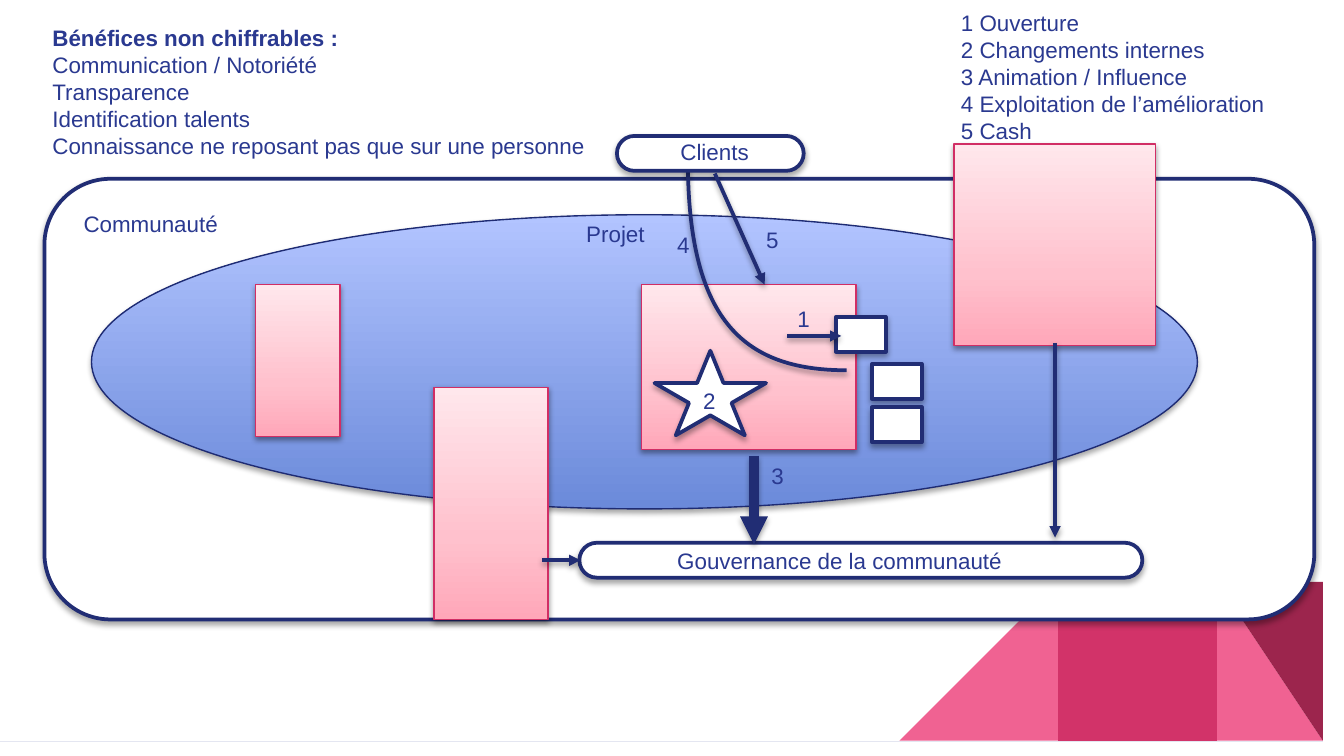
from dataclasses import dataclass, field
from typing import NamedTuple, Optional

from lxml.etree import SubElement
from pptx import Presentation
from pptx.dml.color import RGBColor
from pptx.enum.shapes import MSO_CONNECTOR as Link, MSO_SHAPE as Preset
from pptx.enum.text import MSO_ANCHOR as Anchor, MSO_AUTO_SIZE as AutoSize
from pptx.oxml.ns import qn
from pptx.util import Cm, Pt


class Shadow(NamedTuple):
    opacity: int
    distance: float
    blur: float = 3


class Gradient(NamedTuple):
    stops: tuple[tuple[int, str], ...]
    edge: str
    shadow: Shadow


@dataclass(frozen=True)
class Theme:
    font: str = "Arial"
    size: float = 12
    text: str = "2A3990"
    stroke: str = "212D74"
    paper: str = "FFFFFF"
    pink: str = "F06292"
    crimson: str = "D23369"
    burgundy: str = "9C254D"
    stroke_width: float = 2
    thin_width: float = 0.75
    soft: Shadow = Shadow(35, 1.8)
    firm: Shadow = Shadow(38, 1.6)
    blue_fade: Gradient = Gradient(
        ((0, "6B8ADA"), (100, "B2C4FF")), "1E2B73", Shadow(35, 1.8))
    pink_fade: Gradient = Gradient(
        ((0, "FFA7B9"), (35, "FFC1CD"), (100, "FFE7EC")), "D12E65", Shadow(38, 1.6))


THEME = Theme()
CM = Cm(1)


class Panel(NamedTuple):
    left: float
    top: float
    width: float
    height: float
    preset: Preset = Preset.RECTANGLE
    fade: Optional[Gradient] = None
    adjustments: tuple[float, ...] = ()


class Arrow(NamedTuple):
    start: tuple[float, float]
    end: tuple[float, float]
    weight: float = THEME.stroke_width


class Label(NamedTuple):
    text: str
    left: float
    top: float
    width: float = 0.53


@dataclass(frozen=True)
class Listing:
    left: float
    top: float
    width: float
    height: float
    items: list[str]
    bold_items: set[int] = field(default_factory=set)


SLOT = (0.94, 0.66)
PILL_HEIGHT = 0.66
COMMUNITY = Panel(0.84, 3.38, 24, 8.33, Preset.ROUNDED_RECTANGLE, adjustments=(0.15,))
PROJECT = Panel(1.73, 4.06, 20.9, 5.56, Preset.OVAL, THEME.blue_fade)
BLOCKS = [Panel(*box, fade=THEME.pink_fade) for box in (
    (4.83, 5.38, 1.6, 2.87), (8.2, 7.32, 2.16, 4.39),
    (12.12, 5.38, 4.06, 3.12), (18.03, 2.72, 3.81, 3.81))]
SLOTS = [Panel(*corner, *SLOT) for corner in ((15.8, 5.99), (16.48, 6.88), (16.48, 7.7))]
GOVERNANCE = Panel(10.95, 10.26, 10.64, PILL_HEIGHT, Preset.ROUNDED_RECTANGLE, adjustments=(0.5,))
CLIENTS = Panel(11.66, 2.57, 3.53, PILL_HEIGHT, Preset.ROUNDED_RECTANGLE, adjustments=(0.5,))
CHANGE_STAR = Panel(12.37, 6.63, 2.11, 1.6, Preset.STAR_5_POINT)
IMPROVEMENT_CURVE = [(16.46, 7.19), (14.1, 6.91), (13.06, 5.51), (13.36, 3)]
ARROWS = [
    Arrow((14.88, 6.35), (15.9, 6.35)),
    Arrow((14.25, 8.61), (14.25, 10.29), 5),
    Arrow((19.94, 6.48), (19.94, 10.16)),
    Arrow((10.24, 10.59), (10.97, 10.59)),
    Arrow((13.51, 3.28), (14.45, 5.38)),
]
LABELS = [
    Label("Projet", 10.95, 4.04, 1.4),
    Label("Communauté", 1.45, 3.84, 2.82),
    Label("Gouvernance de la communauté", 12.67, 10.21, 6.43),
    Label("Clients", 12.73, 2.49, 1.57),
    Label("1", 14.94, 5.64),
    Label("2", 13.16, 7.19),
    Label("3", 14.45, 8.61),
    Label("4", 12.67, 4.24),
    Label("5", 14.35, 4.14),
]
BENEFITS = Listing(0.86, 0.33, 10.49, 3.71, [
    "Bénéfices non chiffrables :", "Communication / Notoriété", "Transparence",
    "Identification talents", "Connaissance ne reposant pas que sur une personne"], {0})
LEGEND = Listing(18.03, 0.05, 6.15, 2.72, [
    "1 Ouverture", "2 Changements internes", "3 Animation / Influence",
    "4 Exploitation de l’amélioration", "5 Cash"])


def rgb(code: str) -> RGBColor:
    return RGBColor.from_string(code)


def set_stroke(shape, color: str, weight: float) -> None:
    shape.line.color.rgb = rgb(color)
    shape.line.width = Pt(weight)


def cast_shadow(shape, shadow: Shadow) -> None:
    effects = SubElement(shape._element.spPr, qn("a:effectLst"))
    outer = SubElement(effects, qn("a:outerShdw"), blurRad=str(Pt(shadow.blur)),
                       dist=str(Pt(shadow.distance)), dir="5400000", rotWithShape="0")
    black = SubElement(outer, qn("a:srgbClr"), val="000000")
    SubElement(black, qn("a:alpha"), val=str(shadow.opacity * 1000))


def fill_gradient(shape, fade: Gradient) -> None:
    shape.fill.gradient()
    shape.fill.gradient_angle = 90
    stops = shape._element.spPr.find(qn("a:gradFill")).find(qn("a:gsLst"))
    stops.clear()
    for position, color in fade.stops:
        stop = SubElement(stops, qn("a:gs"), pos=str(position * 1000))
        SubElement(stop, qn("a:srgbClr"), val=color)


def draw_panel(shapes, panel: Panel) -> None:
    shape = shapes.add_shape(panel.preset, Cm(panel.left), Cm(panel.top),
                             Cm(panel.width), Cm(panel.height))
    for index, value in enumerate(panel.adjustments):
        shape.adjustments[index] = value
    if panel.fade:
        fill_gradient(shape, panel.fade)
        set_stroke(shape, panel.fade.edge, THEME.thin_width)
    else:
        shape.fill.solid()
        shape.fill.fore_color.rgb = rgb(THEME.paper)
        set_stroke(shape, THEME.stroke, THEME.stroke_width)
    cast_shadow(shape, panel.fade.shadow if panel.fade else THEME.soft)


def draw_arrow(shapes, arrow: Arrow) -> None:
    connector = shapes.add_connector(Link.STRAIGHT, *map(Cm, arrow.start + arrow.end))
    set_stroke(connector, THEME.stroke, arrow.weight)
    SubElement(connector.line._get_or_add_ln(), qn("a:tailEnd"), type="triangle")
    cast_shadow(connector, THEME.firm)


def draw_curve(shapes, points: list[tuple[float, float]]) -> None:
    builder = shapes.build_freeform(*points[0], scale=CM)
    builder.add_line_segments(points[1:], close=False)
    curve = builder.convert_to_shape()
    segments = list(curve._element.iter(qn("a:lnTo")))
    outline = segments[0].getparent()
    bezier = SubElement(outline, qn("a:cubicBezTo"))
    for segment in segments:
        bezier.append(segment[0])
        outline.remove(segment)
    curve.fill.background()
    set_stroke(curve, THEME.stroke, THEME.stroke_width)
    cast_shadow(curve, THEME.firm)


def draw_polygon(shapes, points: list[tuple[float, float]], color: str) -> None:
    builder = shapes.build_freeform(*points[0], scale=CM)
    builder.add_line_segments(points[1:], close=True)
    polygon = builder.convert_to_shape()
    polygon.shadow.inherit = False
    polygon.fill.solid()
    polygon.fill.fore_color.rgb = rgb(color)
    polygon.line.fill.background()


def draw_footer(shapes, width: float, height: float) -> None:
    side, base = 2.74, 13.59
    top = base - side
    x1, x2, x3, x4 = (width - side * step for step in (3, 2, 1, 0))
    draw_polygon(shapes, [(x3, base), (x4, base), (x3, top)], THEME.pink)
    draw_polygon(shapes, [(x2, base), (x1, base), (x2, top)], THEME.pink)
    draw_polygon(shapes, [(x2, top), (x3, top), (x3, base), (x2, base)], THEME.crimson)
    draw_polygon(shapes, [(x3, top), (x4, top), (x4, base)], THEME.burgundy)
    draw_polygon(shapes, [(0, base), (width, base), (width, height), (0, height)], THEME.text)


def prepare_frame(frame) -> None:
    frame.word_wrap = False
    frame.auto_size = AutoSize.NONE
    frame.vertical_anchor = Anchor.TOP
    frame.margin_left = frame.margin_right = frame.margin_top = frame.margin_bottom = Cm(0.13)


def add_run(paragraph, text: str, bold: bool = False) -> None:
    run = paragraph.add_run()
    run.text = text
    run.font.name = THEME.font
    run.font.size = Pt(THEME.size)
    run.font.bold = bold
    run.font.color.rgb = rgb(THEME.text)


def draw_label(shapes, label: Label) -> None:
    caption = shapes.add_textbox(Cm(label.left), Cm(label.top), Cm(label.width), Cm(0.74))
    prepare_frame(caption.text_frame)
    add_run(caption.text_frame.paragraphs[0], label.text)


def fill_listing(body, listing: Listing) -> None:
    body.left, body.top = Cm(listing.left), Cm(listing.top)
    body.width, body.height = Cm(listing.width), Cm(listing.height)
    frame = body.text_frame
    prepare_frame(frame)
    for index, item in enumerate(listing.items):
        paragraph = frame.add_paragraph() if index else frame.paragraphs[0]
        paragraph.space_before = Pt(0)
        properties = paragraph._p.get_or_add_pPr()
        properties.set("marL", "0")
        properties.set("indent", "0")
        SubElement(properties, qn("a:buNone"))
        add_run(paragraph, item, index in listing.bold_items)


def main() -> None:
    width, height = 25.4, 14.29
    deck = Presentation()
    deck.slide_width, deck.slide_height = Cm(width), Cm(height)
    slide = deck.slides.add_slide(deck.slide_layouts[3])
    shapes = slide.shapes
    title, benefits, legend = list(slide.placeholders)[:3]
    title._element.getparent().remove(title._element)
    fill_listing(benefits, BENEFITS)
    fill_listing(legend, LEGEND)
    draw_footer(shapes, width, height)
    for panel in (COMMUNITY, PROJECT, *BLOCKS, *SLOTS, GOVERNANCE, CHANGE_STAR):
        draw_panel(shapes, panel)
    draw_curve(shapes, IMPROVEMENT_CURVE)
    draw_panel(shapes, CLIENTS)
    for arrow in ARROWS:
        draw_arrow(shapes, arrow)
    for label in LABELS:
        draw_label(shapes, label)
    deck.save("out.pptx")


if __name__ == "__main__":
    main()
